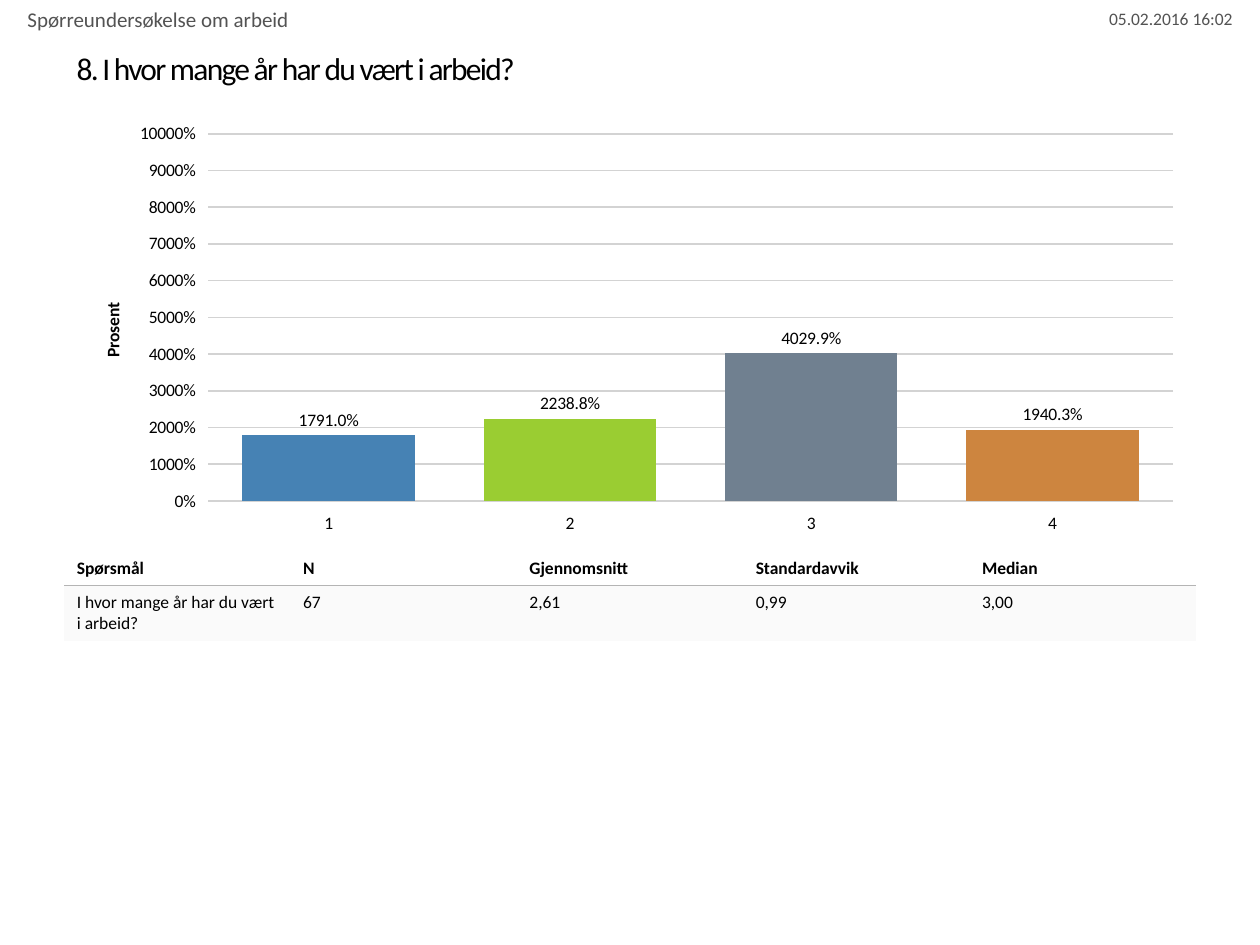
from dataclasses import dataclass

from lxml.etree import SubElement
from pptx import Presentation
from pptx.chart.data import CategoryChartData
from pptx.dml.color import RGBColor
from pptx.enum.chart import XL_CHART_TYPE, XL_LABEL_POSITION, XL_TICK_MARK
from pptx.enum.text import MSO_ANCHOR, PP_ALIGN
from pptx.oxml.ns import qn
from pptx.util import Pt

FONT = "Calibri"
BLACK = RGBColor(0x00, 0x00, 0x00)
GREY = RGBColor(0x53, 0x53, 0x53)
GRID = RGBColor(0xD3, 0xD3, 0xD3)
RULE = RGBColor(0xB4, 0xB4, 0xB4)
HEADER_FILL = RGBColor(0xFF, 0xFF, 0xFF)
BODY_FILL = RGBColor(0xFA, 0xFA, 0xFA)
STEEL_BLUE = RGBColor(0x46, 0x82, 0xB4)
YELLOW_GREEN = RGBColor(0x9A, 0xCD, 0x32)
SLATE = RGBColor(0x70, 0x80, 0x90)
PERU = RGBColor(0xCD, 0x85, 0x3F)

LEFT, WIDTH = 36.7, 646.6


@dataclass(frozen=True)
class Caption:
    text: str
    left: float
    top: float
    width: float
    height: float
    size: float
    color: RGBColor
    align: PP_ALIGN = PP_ALIGN.LEFT
    anchor: MSO_ANCHOR = MSO_ANCHOR.MIDDLE
    indent: float = 0
    space_before: float = 0
    spacing: float = 0


@dataclass(frozen=True)
class Bar:
    category: str
    value: float
    color: RGBColor


CAPTIONS = [
    Caption("05.02.2016 16:02", 456.5, 2.9, 254.9, 15.1, 10, GREY, PP_ALIGN.RIGHT),
    Caption("8. I hvor mange år har du vært i arbeid?", LEFT, 17.3, 648, 43.2, 18,
            BLACK, spacing=-1),
    Caption("Spørreundersøkelse om arbeid", 0, 0, 720, 18, 12, GREY,
            anchor=MSO_ANCHOR.TOP, indent=8.64, space_before=2.4),
]
BARS = [
    Bar("1", 17.91, STEEL_BLUE),
    Bar("2", 22.388, YELLOW_GREEN),
    Bar("3", 40.299, SLATE),
    Bar("4", 19.403, PERU),
]
STATISTICS = [
    ["Spørsmål", "N", "Gjennomsnitt", "Standardavvik", "Median"],
    ["I hvor mange år har du vært i arbeid?", "67", "2,61", "0,99", "3,00"],
]
ROW_HEIGHTS = [19, 31.6]


def style_font(font, size: float, color: RGBColor = BLACK, bold: bool = False) -> None:
    font.name, font.size, font.bold = FONT, Pt(size), bold
    font.color.rgb = color


def add_caption(slide, caption: Caption) -> None:
    box = slide.shapes.add_textbox(Pt(caption.left), Pt(caption.top),
                                   Pt(caption.width), Pt(caption.height))
    frame = box.text_frame
    frame.word_wrap = True
    frame.vertical_anchor = caption.anchor
    line = frame.paragraphs[0]
    line.text = caption.text
    line.alignment = caption.align
    line.space_before = Pt(caption.space_before)
    style_font(line.font, caption.size, caption.color)
    if caption.indent:
        line._p.get_or_add_pPr().set("marL", str(Pt(caption.indent)))
    if caption.spacing:
        for run in line.runs:
            run._r.get_or_add_rPr().set("spc", str(int(caption.spacing * 100)))


def set_layout(parent, index: int, **fractions: float) -> None:
    """Place a chart part by fractions of the chart's size."""
    for old in parent.findall(qn("c:layout")):
        parent.remove(old)
    layout = SubElement(parent, qn("c:layout"))
    parent.insert(index, layout)
    manual = SubElement(layout, qn("c:manualLayout"))
    if "w" in fractions:
        SubElement(manual, qn("c:layoutTarget")).set("val", "inner")
    for side in ("xMode", "yMode"):
        SubElement(manual, qn(f"c:{side}")).set("val", "edge")
    for name, fraction in fractions.items():
        SubElement(manual, qn(f"c:{name}")).set("val", str(fraction))


def add_percent_chart(slide, bars: list[Bar]) -> None:
    data = CategoryChartData()
    data.categories = [bar.category for bar in bars]
    data.add_series("Series 1", [bar.value for bar in bars])
    chart = slide.shapes.add_chart(XL_CHART_TYPE.COLUMN_CLUSTERED, Pt(LEFT), Pt(66.2),
                                   Pt(WIDTH), Pt(244.1), data).chart
    chart.has_title = chart.has_legend = False
    style_font(chart.font, 18)

    # Axes
    percent_axis = chart.value_axis
    for axis in (chart.category_axis, percent_axis):
        style_font(axis.tick_labels.font, 10)
        axis.major_tick_mark = XL_TICK_MARK.CROSS
        axis.format.line.fill.background()
    percent_axis.minimum_scale, percent_axis.maximum_scale = 0, 100
    percent_axis.major_unit = 10
    percent_axis.tick_labels.number_format = "0%"
    percent_axis.tick_labels.number_format_is_linked = False
    gridline = percent_axis.major_gridlines.format.line
    gridline.color.rgb, gridline.width = GRID, Pt(1)
    heading = percent_axis.axis_title.text_frame.paragraphs[0]
    heading.text = "Prosent"
    style_font(heading.font, 10, bold=True)
    set_layout(percent_axis.axis_title._element, 1, x=0.03, y=0.43)

    # Bars and their labels
    plot = chart.plots[0]
    plot.gap_width = 40
    plot.vary_by_categories = False
    set_layout(plot._element.getparent(), 0, x=0.127, y=0.042, w=0.853, h=0.86)
    series = plot.series[0]
    series.format.fill.solid()
    series.format.fill.fore_color.rgb = STEEL_BLUE
    for index, bar in enumerate(bars):
        fill = series.points[index].format.fill
        fill.solid()
        fill.fore_color.rgb = bar.color
    labels = series.data_labels
    labels.show_value = True
    labels.number_format, labels.number_format_is_linked = "0.0%", False
    labels.position = XL_LABEL_POSITION.OUTSIDE_END
    style_font(labels.font, 10)


def add_border(cell, side: str) -> None:
    border = SubElement(cell._tc.get_or_add_tcPr(), qn(f"a:{side}"), w=str(Pt(1)))
    fill = SubElement(border, qn("a:solidFill"))
    SubElement(fill, qn("a:srgbClr"), val=str(RULE))


def add_statistics(slide, rows: list[list[str]]) -> None:
    table = slide.shapes.add_table(len(rows), len(rows[0]), Pt(LEFT), Pt(315.4),
                                   Pt(WIDTH), Pt(sum(ROW_HEIGHTS))).table
    table.first_row = table.horz_banding = False
    # "No Style, No Grid" leaves only the rule under the header
    table._tbl.tblPr.find(qn("a:tableStyleId")).text = (
        "{2D5ABB26-0587-4C30-8999-92F81FD0307C}")
    for row_index, texts in enumerate(rows):
        is_header = row_index == 0
        table.rows[row_index].height = Pt(ROW_HEIGHTS[row_index])
        for column_index, text in enumerate(texts):
            cell = table.cell(row_index, column_index)
            cell.text = text
            style_font(cell.text_frame.paragraphs[0].font, 10, bold=is_header)
            add_border(cell, "lnB" if is_header else "lnT")
            cell.fill.solid()
            cell.fill.fore_color.rgb = HEADER_FILL if is_header else BODY_FILL


def main() -> None:
    presentation = Presentation()
    presentation.slide_width, presentation.slide_height = Pt(720), Pt(540)
    slide = presentation.slides.add_slide(presentation.slide_layouts[6])
    for caption in CAPTIONS:
        add_caption(slide, caption)
    add_percent_chart(slide, BARS)
    add_statistics(slide, STATISTICS)
    presentation.save("out.pptx")


if __name__ == "__main__":
    main()
